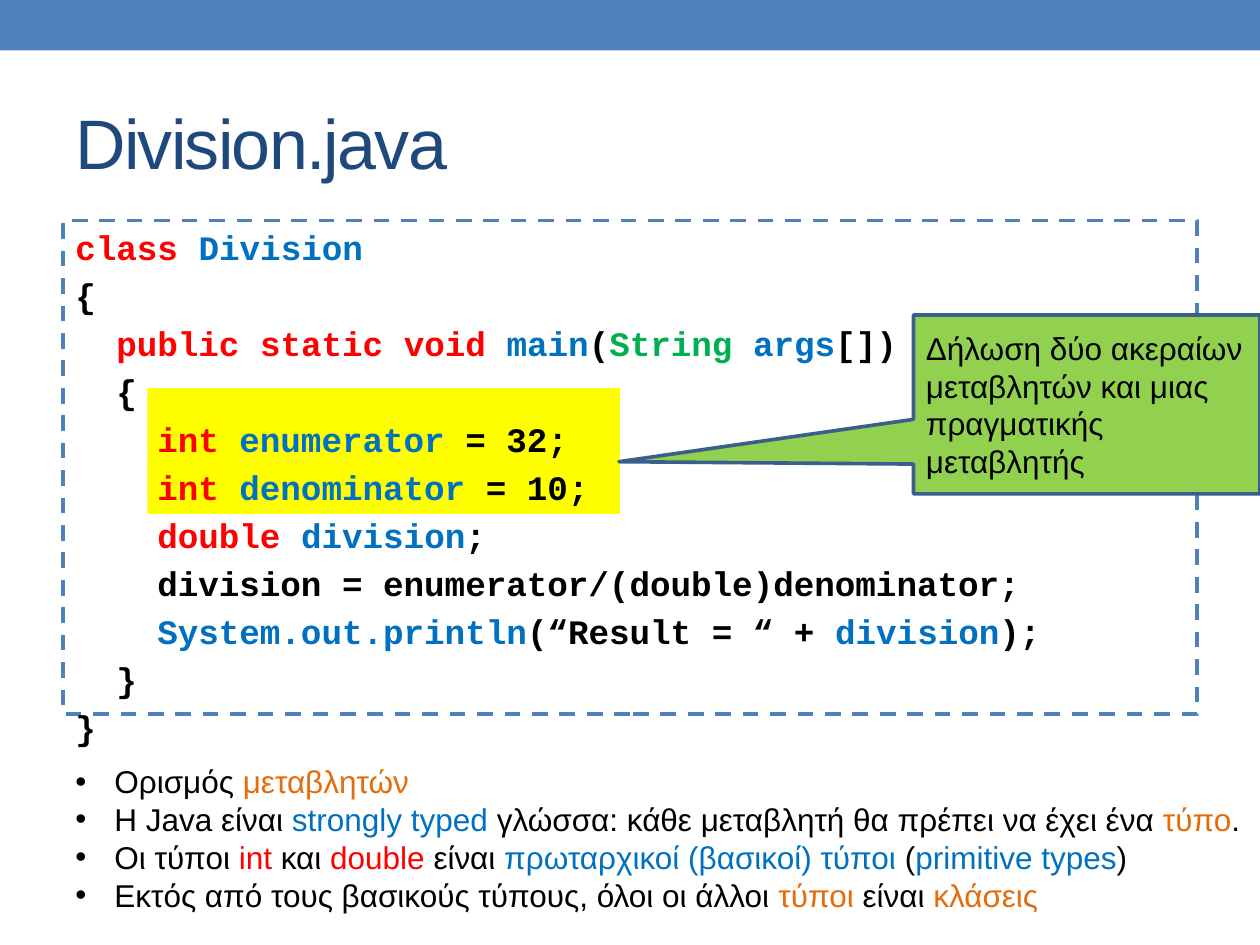
from pptx import Presentation
from pptx.dml.color import RGBColor
from pptx.enum.dml import MSO_LINE_DASH_STYLE as Dash
from pptx.enum.shapes import MSO_SHAPE as Shape
from pptx.enum.text import MSO_ANCHOR as Anchor, PP_ALIGN as Align
from pptx.oxml.ns import qn
from pptx.util import Inches, Pt
from lxml import etree

BLACK, RED, BLUE, GREEN, ORANGE = "000000", "FF0000", "0070C0", "00B050", "E46C0A"
ACCENT, NAVY = "4F81BD", "1F497D"
CODE_SIZE = 19.6
CODE_GAP = 0.2 * CODE_SIZE  # space before each code line
CODE_STEP = 0.325  # two monospaced characters

# Each code line: indent level, then its runs
CODE = [
    (0, [("class ", RED), ("Division", BLUE)]),
    (0, [("{", BLACK)]),
    (1, [("public static void ", RED), ("main", BLUE), ("(", BLACK),
         ("String ", GREEN), ("args", BLUE), ("[])", BLACK)]),
    (1, [("{", BLACK)]),
    (2, [("int ", RED), ("enumerator", BLUE), (" = 32;", BLACK)]),
    (2, [("int ", RED), ("denominator", BLUE), (" = 10;", BLACK)]),
    (2, [("double ", RED), ("division", BLUE), (";", BLACK)]),
    (2, [("division = enumerator/(double)denominator;", BLACK)]),
    (2, [("System.out.println", BLUE), ("(“Result = “ + ", BLACK),
         ("division", BLUE), (");", BLACK)]),
    (1, [("}", BLACK)]),
    (0, [("}", BLACK)]),
]

NOTES = [
    [("Ορισμός ", BLACK), ("μεταβλητών", ORANGE)],
    [("Η Java είναι ", BLACK), ("strongly typed ", BLUE),
     ("γλώσσα: κάθε μεταβλητή θα πρέπει να έχει ένα ", BLACK),
     ("τύπο", ORANGE), (".", BLACK)],
    [("Οι τύποι ", BLACK), ("int ", RED), ("και ", BLACK), ("double ", RED),
     ("είναι ", BLACK), ("πρωταρχικοί (βασικοί) τύποι ", BLUE), ("(", BLACK),
     ("primitive types", BLUE), (")", BLACK)],
    [("Εκτός από τους βασικούς τύπους, όλοι οι άλλοι ", BLACK),
     ("τύποι", ORANGE), (" είναι ", BLACK), ("κλάσεις", ORANGE)],
]


def rgb(value):
    return RGBColor.from_string(value)


def add_box(slide, box, fill=None, line=None, width=1, kind=Shape.RECTANGLE):
    sp = slide.shapes.add_shape(kind, *map(Inches, box))
    sp.shadow.inherit = False
    if fill:
        sp.fill.solid()
        sp.fill.fore_color.rgb = rgb(fill)
    else:
        sp.fill.background()
    if line:
        sp.line.color.rgb = rgb(line)
        sp.line.width = Pt(width)
    else:
        sp.line.fill.background()
    return sp


def add_text(sp, lines, size, font="Arial", bold=False, anchor=Anchor.TOP, wrap=True):
    """Fill a shape with paragraphs of (text, colour) runs."""
    tf = sp.text_frame
    tf.word_wrap = wrap
    tf.vertical_anchor = anchor
    for i, runs in enumerate(lines):
        p = tf.add_paragraph() if i else tf.paragraphs[0]
        p.alignment = Align.LEFT
        for text, color in runs:
            r = p.add_run()
            r.text = text
            r.font.name = font
            r.font.size = Pt(size)
            r.font.bold = bold
            r.font.color.rgb = rgb(color)
    return tf.paragraphs


def set_indent(p, left, first=0):
    pPr = p._p.get_or_add_pPr()
    pPr.set("marL", str(Inches(left)))
    pPr.set("indent", str(Inches(first)))
    return pPr


def add_title(slide, box):
    sp = slide.shapes.add_textbox(*map(Inches, box))
    p = add_text(sp, [[("Division.java", NAVY)]], 40, anchor=Anchor.MIDDLE)[0]
    p.runs[0].font._element.set("spc", "-100")


def add_code(slide, box):
    sp = add_box(slide, box, line=ACCENT, width=2.25)
    sp.line.dash_style = Dash.DASH
    lines = [runs for _, runs in CODE]
    paragraphs = add_text(sp, lines, CODE_SIZE, "Courier New", bold=True)
    for p, (level, _) in zip(paragraphs, CODE):
        p.space_before = Pt(CODE_GAP)
        set_indent(p, level * CODE_STEP)


def add_notes(slide, box):
    sp = slide.shapes.add_textbox(*map(Inches, box))
    for p in add_text(sp, NOTES, 18, wrap=False):
        pPr = set_indent(p, 0.31, -0.31)
        etree.SubElement(pPr, qn("a:buFont")).set("typeface", "Arial")
        etree.SubElement(pPr, qn("a:buChar")).set("char", "•")


def add_callout(slide, box):
    sp = add_box(slide, box, "92D050", "3A5F8C", 2.08, Shape.RECTANGULAR_CALLOUT)
    sp.adjustments[0], sp.adjustments[1] = -1.35, 0.32
    text = "Δήλωση δύο ακεραίων μεταβλητών και μιας πραγματικής μεταβλητής"
    add_text(sp, [[(text, BLACK)]], 18, anchor=Anchor.MIDDLE)


def main():
    prs = Presentation()
    prs.slide_width, prs.slide_height = Inches(10), Inches(7.5)
    slide = prs.slides.add_slide(prs.slide_layouts[6])
    add_box(slide, (0, 0, 10, 0.4), ACCENT)  # top band
    add_box(slide, (1.17, 3.08, 3.75, 1), "FFFF00")  # highlight behind the code
    add_title(slide, (0.5, 0.58, 9, 1.08))
    add_code(slide, (0.5, 1.75, 9, 3.92))
    add_notes(slide, (0.5, 6, 9.53, 1.31))
    add_callout(slide, (7.25, 2.5, 2.75, 1.42))
    prs.save("out.pptx")


if __name__ == "__main__":
    main()
